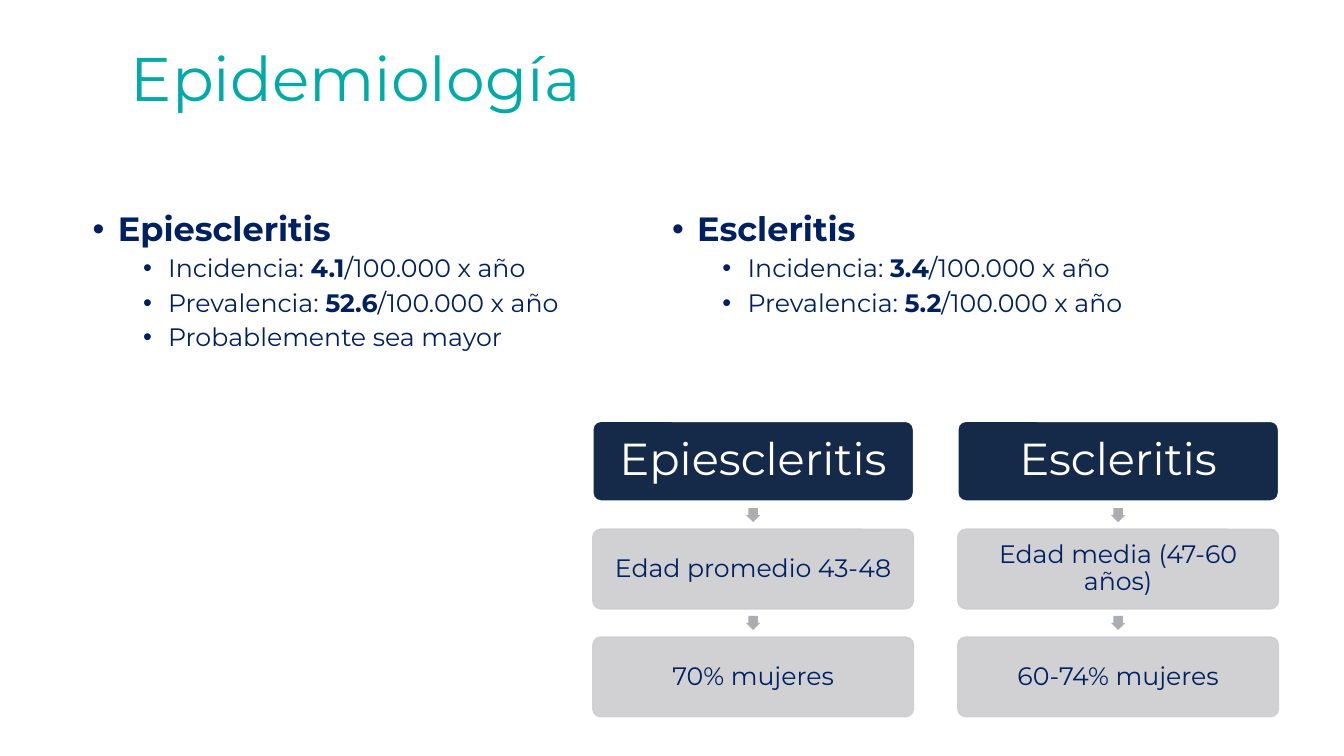
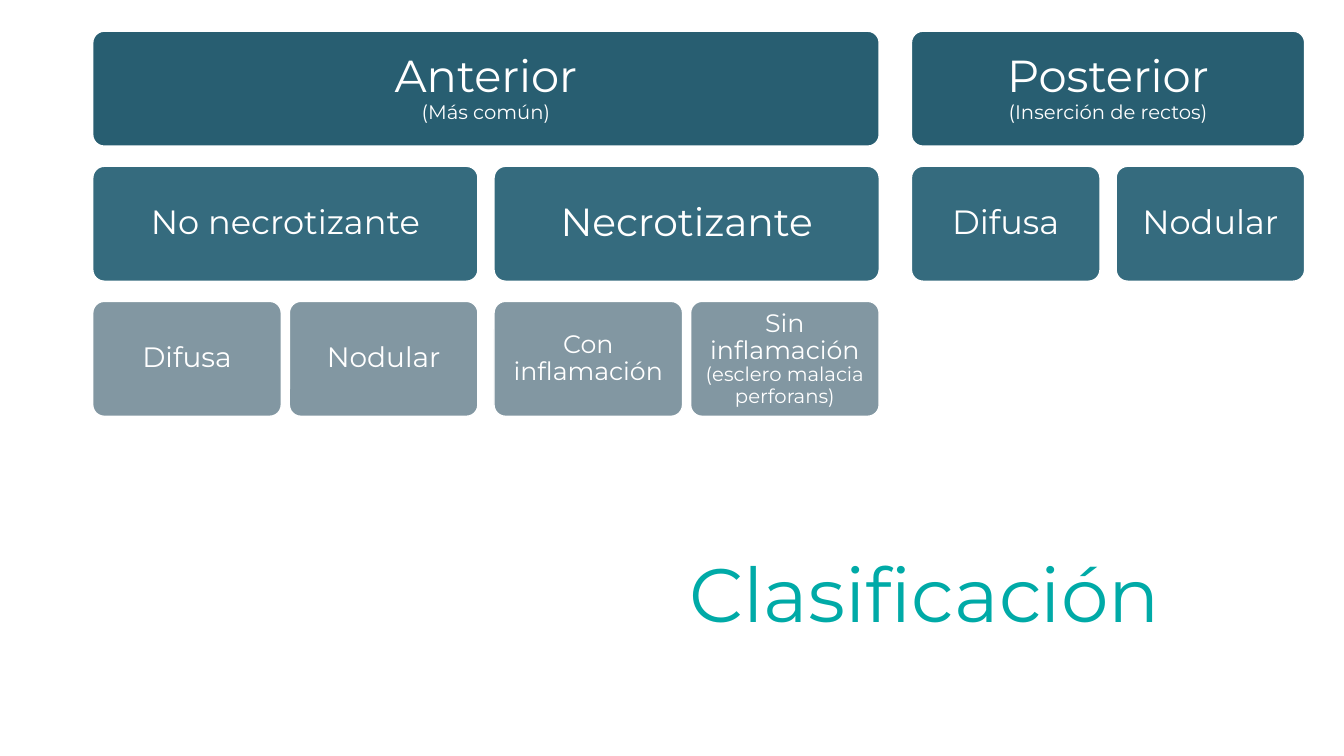
from dataclasses import dataclass
from typing import NamedTuple

import pptx
import pptx.dml.color
import pptx.enum.shapes
import pptx.enum.text
import pptx.oxml
import pptx.oxml.ns
import pptx.util

SLIDE_W, SLIDE_H = 13.33, 7.5
FONT = "Montserrat"
COLORS = {
    "title": "00AAA7", "text": "002060", "white": "FFFFFF",
    "navy": "152A48", "gray": "CCCDCF", "arrow": "ACADB1",
    "level0": "285E71", "level1": "356B7E", "level2": "8297A2",
}
CENTER = pptx.enum.text.PP_ALIGN.CENTER
LEFT = pptx.enum.text.PP_ALIGN.LEFT
ROUNDED = pptx.enum.shapes.MSO_SHAPE.ROUNDED_RECTANGLE
DOWN_ARROW = pptx.enum.shapes.MSO_SHAPE.DOWN_ARROW


class Box(NamedTuple):
    left: float
    top: float
    width: float
    height: float

    def emu(self) -> list:
        return [pptx.util.Inches(value) for value in self]


@dataclass
class Label:
    text: str
    size: int
    inset: float
    note: str = ""
    note_below: bool = False


@dataclass
class Branch:
    label: Label
    children: tuple = ()


@dataclass
class Rate:
    name: str
    value: str = ""
    unit: str = "/100.000 x año"


@dataclass
class Disease:
    name: str
    rates: tuple
    facts: tuple


DISEASES = (
    Disease("Epiescleritis",
            (Rate("Incidencia: ", "4.1"), Rate("Prevalencia: ", "52.6"),
             Rate("Probablemente sea mayor")),
            ("Edad promedio 43-48", "70% mujeres")),
    Disease("Escleritis",
            (Rate("Incidencia: ", "3.4"), Rate("Prevalencia: ", "5.2")),
            ("Edad media (47-60 años)", "60-74% mujeres")),
)

CLASSIFICATION = (
    Branch(Label("Anterior", 32, 0.13, "(Más común)", True), (
        Branch(Label("No necrotizante", 24, 0.1), (
            Branch(Label("Difusa", 20, 0.08)),
            Branch(Label("Nodular", 20, 0.08)))),
        Branch(Label("Necrotizante", 28, 0.12), (
            Branch(Label("Con inflamación", 18, 0.07)),
            Branch(Label("Sin inflamación ", 18, 0.07,
                         "(esclero malacia perforans)")))))),
    Branch(Label("Posterior", 32, 0.13, "(Inserción de rectos)", True), (
        Branch(Label("Difusa", 24, 0.1)),
        Branch(Label("Nodular", 24, 0.1)))),
)

# Disease columns: two cards across, three down
CARD = Box(5.88, 4.18, 3.18, 0.79)
CARD_COLUMN, CARD_ROW = 3.62, 1.07
ARROW_SIZE = 0.14

# Classification tree: the gap between siblings halves at each level
TREE_LEFT, TREE_TOP = 0.92, 0.31
LEAF_W, BRANCH_H, TREE_ROW = 1.87, 1.14, 1.34
SIBLING_GAPS = (0.32, 0.16, 0.08)


def rgb(name: str) -> pptx.dml.color.RGBColor:
    return pptx.dml.color.RGBColor.from_string(COLORS[name])


def style(paragraph, size: int, color: str, align=LEFT) -> None:
    paragraph.alignment = align
    paragraph.line_spacing = 0.9
    font = paragraph.font
    font.name, font.size = FONT, pptx.util.Pt(size)
    font.color.rgb = rgb(color)


def add_run(paragraph, text: str):
    run = paragraph.add_run()
    run.text = text
    return run


def add_text_frame(slide, box: Box):
    frame = slide.shapes.add_textbox(*box.emu()).text_frame
    frame.word_wrap = True
    frame.vertical_anchor = pptx.enum.text.MSO_ANCHOR.MIDDLE
    return frame


def add_title(slide, text: str, box: Box, size: int, align=LEFT) -> None:
    paragraph = add_text_frame(slide, box).paragraphs[0]
    add_run(paragraph, text)
    style(paragraph, size, "title", align)


def set_opacity(shape, percent: int) -> None:
    """Make the fill and the outline of the shape partly transparent."""
    for color in shape._element.spPr.iter(pptx.oxml.ns.qn("a:srgbClr")):
        color.append(pptx.oxml.parse_xml(
            f'<a:alpha {pptx.oxml.ns.nsdecls("a")} val="{percent * 1000}"/>'))


def add_card(slide, box: Box, label: Label, fill: str, line: str = "white",
             color: str = "white"):
    card = slide.shapes.add_shape(ROUNDED, *box.emu())
    card.adjustments[0] = 0.1
    card.shadow.inherit = False
    card.fill.solid()
    card.fill.fore_color.rgb = rgb(fill)
    card.line.color.rgb = rgb(line)
    card.line.width = pptx.util.Pt(1)
    frame = card.text_frame
    frame.word_wrap = True
    frame.vertical_anchor = pptx.enum.text.MSO_ANCHOR.MIDDLE
    inset = pptx.util.Inches(label.inset)
    frame.margin_left = frame.margin_right = inset
    frame.margin_top = frame.margin_bottom = inset
    paragraph = frame.paragraphs[0]
    style(paragraph, label.size, color, CENTER)
    add_run(paragraph, label.text)
    if label.note_below:
        paragraph.add_line_break()
    if label.note:
        add_run(paragraph, label.note).font.size = pptx.util.Pt(14)
    return card


def add_arrow(slide, center_x: float, center_y: float) -> None:
    half = ARROW_SIZE / 2
    box = Box(center_x - half, center_y - half, ARROW_SIZE, ARROW_SIZE)
    arrow = slide.shapes.add_shape(DOWN_ARROW, *box.emu())
    arrow.adjustments[0] = 0.67
    arrow.adjustments[1] = 0.5
    arrow.shadow.inherit = False
    arrow.fill.solid()
    arrow.fill.fore_color.rgb = rgb("arrow")
    arrow.line.fill.background()


def add_disease_column(slide, disease: Disease, column: int) -> None:
    left = CARD.left + column * CARD_COLUMN
    add_card(slide, CARD._replace(left=left),
             Label(disease.name, 32, 0.04), "navy")
    for row, fact in enumerate(disease.facts, start=1):
        top = CARD.top + row * CARD_ROW
        add_arrow(slide, left + CARD.width / 2,
                  top - (CARD_ROW - CARD.height) / 2)
        card = add_card(slide, CARD._replace(left=left, top=top),
                        Label(fact, 18, 0.03), "gray", "gray", "text")
        set_opacity(card, 90)


def add_bullet(frame, level: int):
    """Return a new bulleted paragraph, reusing the empty first one."""
    first = not frame.paragraphs[0].runs
    paragraph = frame.paragraphs[0] if first else frame.add_paragraph()
    properties = paragraph._p.get_or_add_pPr()
    properties.set("marL", str(pptx.util.Inches(0.25 + 0.5 * level)))
    properties.set("indent", str(pptx.util.Inches(-0.25)))
    for bullet in ('<a:buFont %s typeface="Arial"/>', '<a:buChar %s char="•"/>'):
        properties.append(
            pptx.oxml.parse_xml(bullet % pptx.oxml.ns.nsdecls("a")))
    paragraph.level = level
    if not first:
        paragraph.space_before = pptx.util.Pt(5 if level else 10)
    style(paragraph, 18 if level else 24, "text")
    return paragraph


def add_rates(slide, box: Box) -> None:
    frame = add_text_frame(slide, box)
    frame._txBody.bodyPr.set("numCol", str(len(DISEASES)))
    for disease in DISEASES:
        heading = add_bullet(frame, 0)
        add_run(heading, disease.name)
        heading.font.bold = True
        for rate in disease.rates:
            line = add_bullet(frame, 1)
            add_run(line, rate.name)
            if rate.value:
                add_run(line, rate.value).font.bold = True
                add_run(line, rate.unit)


def branch_width(branch: Branch, level: int) -> float:
    if not branch.children:
        return LEAF_W
    gaps = SIBLING_GAPS[level + 1] * (len(branch.children) - 1)
    return gaps + sum(branch_width(c, level + 1) for c in branch.children)


def add_branches(slide, branches: tuple, left: float, level: int = 0) -> None:
    """Draw sibling branches side by side, each above its children."""
    for branch in branches:
        width = branch_width(branch, level)
        box = Box(left, TREE_TOP + level * TREE_ROW, width, BRANCH_H)
        add_card(slide, box, branch.label, f"level{level}")
        add_branches(slide, branch.children, left, level + 1)
        left += width + SIBLING_GAPS[level]


def build_epidemiology(slide) -> None:
    add_title(slide, "Epidemiología", Box(1.2, 0.08, 11.5, 1.45), 44)
    for column, disease in enumerate(DISEASES):
        add_disease_column(slide, disease, column)
    add_rates(slide, Box(0.82, 1.85, 11.69, 1.9))


def build_classification(slide) -> None:
    add_branches(slide, CLASSIFICATION, TREE_LEFT)
    add_title(slide, "Clasificación", Box(5.53, 4.79, 7.28, 2.29), 54, CENTER)


def main() -> None:
    deck = pptx.Presentation()
    deck.slide_width = pptx.util.Inches(SLIDE_W)
    deck.slide_height = pptx.util.Inches(SLIDE_H)
    for build in (build_epidemiology, build_classification):
        build(deck.slides.add_slide(deck.slide_layouts[6]))
    deck.save("out.pptx")


if __name__ == "__main__":
    main()
